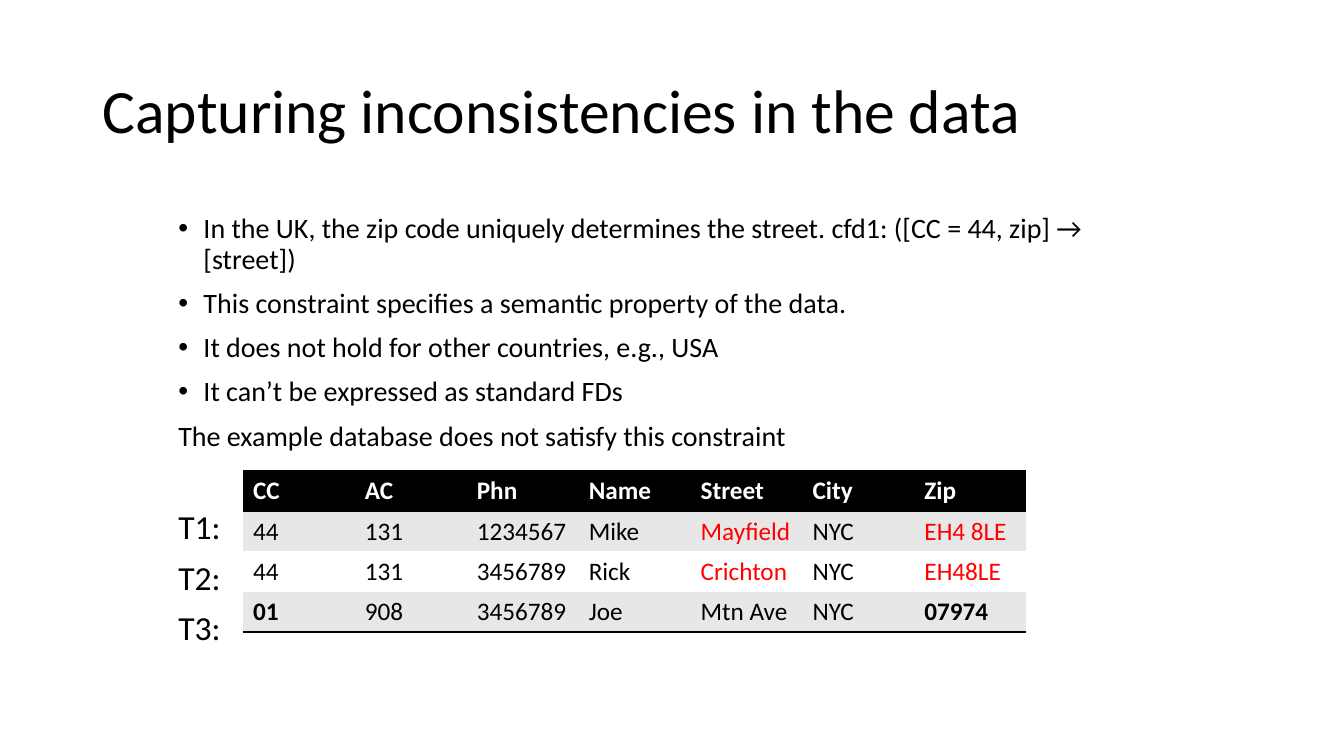
import pptx
import pptx.util
import pptx.dml.color
import pptx.enum.text
import pptx.oxml
import pptx.oxml.ns
from lxml import etree

Inches, Pt = pptx.util.Inches, pptx.util.Pt
RGB = pptx.dml.color.RGBColor.from_string
ANCHOR = pptx.enum.text.MSO_ANCHOR
qn = pptx.oxml.ns.qn

# Content
TITLE = "Capturing inconsistencies in the data"
BULLETS = [
    "In the UK, the zip code uniquely determines the street. cfd1: ([CC = 44, zip] → [street])",
    "This constraint specifies a semantic property of the data.",
    "It does not hold for other countries, e.g., USA",
    "It can’t be expressed as standard FDs",
]
CONCLUSION = "The example database does not satisfy this constraint"
ROW_LABELS = ["T1:", "T2:", "T3:"]
TABLE = [
    ["CC", "AC", "Phn", "Name", "Street", "City", "Zip"],
    ["44", "131", "1234567", "Mike", "Mayfield", "NYC", "EH4 8LE"],
    ["44", "131", "3456789", "Rick", "Crichton", "NYC", "EH48LE"],
    ["01", "908", "3456789", "Joe", "Mtn Ave", "NYC", "07974"],
]
CONFLICTS = {"Mayfield", "EH4 8LE", "Crichton", "EH48LE"}
EMPHASIS = {"01", "07974"}

THEME = {
    "font": "Calibri", "text": "000000", "header_text": "FFFFFF", "conflict": "FF0000",
    "header": "000000", "band": "E7E7E7", "plain": "FFFFFF", "rule": "000000",
    "title": 44, "body": 20, "label": 24, "cell": 18,
}
PLAIN_STYLE = "{2D5ABB26-0587-4C30-8999-92F81FD0307C}"


def write(p, text, size, color="text", bold=False):
    r = p.add_run()
    r.text = text
    formats = {"name": THEME["font"], "size": Pt(THEME[size]), "bold": bold}
    for name, value in formats.items():
        setattr(r.font, name, value)
    r.font.color.rgb = RGB(THEME[color])


def add_text(s, box, paragraphs, anchor):
    """Each paragraph is (text, size, space before, bulleted)."""
    tf = s.shapes.add_textbox(*map(Inches, box)).text_frame
    tf.word_wrap = True
    tf.vertical_anchor = anchor
    for i, (text, size, before, bulleted) in enumerate(paragraphs):
        p = tf.add_paragraph() if i else tf.paragraphs[0]
        p.line_spacing = 0.9
        p.space_before = Pt(before)
        if bulleted:
            pPr = p._p.get_or_add_pPr()
            pPr.set("marL", str(Inches(0.25)))
            pPr.set("indent", str(-Inches(0.25)))
            etree.SubElement(pPr, qn("a:buFont")).set("typeface", "Arial")
            etree.SubElement(pPr, qn("a:buChar")).set("char", "•")
        write(p, text, size)


def add_rule(cell, side):
    """Call before filling the cell: borders come first in its properties."""
    ln = etree.SubElement(cell._tc.get_or_add_tcPr(), qn("a:" + side), w=str(Pt(2)))
    fill = etree.SubElement(ln, qn("a:solidFill"))
    etree.SubElement(fill, qn("a:srgbClr"), val=THEME["rule"])


def add_data_table(s, left, top, col_width, row_height):
    rows, cols = len(TABLE), len(TABLE[0])
    table = s.shapes.add_table(rows, cols, Inches(left), Inches(top),
                               Inches(cols * col_width), Inches(rows * row_height)).table
    table._tbl.tblPr.find(qn("a:tableStyleId")).text = PLAIN_STYLE
    for col in table.columns:
        col.width = Inches(col_width)
    for i, values in enumerate(TABLE):
        table.rows[i].height = Inches(row_height)
        header = i == 0
        sides = ["lnT", "lnB"] if header else ["lnB"] if i == rows - 1 else []
        background = "header" if header else "band" if i % 2 else "plain"
        for j, value in enumerate(values):
            cell = table.cell(i, j)
            for side in sides:
                add_rule(cell, side)
            cell.fill.solid()
            cell.fill.fore_color.rgb = RGB(THEME[background])
            color = "header_text" if header else "conflict" if value in CONFLICTS else "text"
            write(cell.text_frame.paragraphs[0], value, "cell", color,
                  header or value in EMPHASIS)


def main():
    prs = pptx.Presentation()
    prs.slide_width, prs.slide_height = Inches(13.33), Inches(7.5)
    s = prs.slides.add_slide(prs.slide_layouts[6])

    # Title
    add_text(s, (0.92, 0.4, 11.5, 1.45), [(TITLE, "title", 0, False)], ANCHOR.MIDDLE)

    # Bullets, conclusion, then row labels set lower beside the table
    body = [(text, "body", 10, True) for text in BULLETS]
    body.append((CONCLUSION, "body", 10, False))
    body += [(text, "label", 10 if i else 42, False) for i, text in enumerate(ROW_LABELS)]
    add_text(s, (1.67, 2.08, 10, 4.67), body, ANCHOR.TOP)

    # Example database
    add_data_table(s, 2.41, 4.67, 1.11, 0.4)

    prs.save("out.pptx")


if __name__ == "__main__":
    main()
